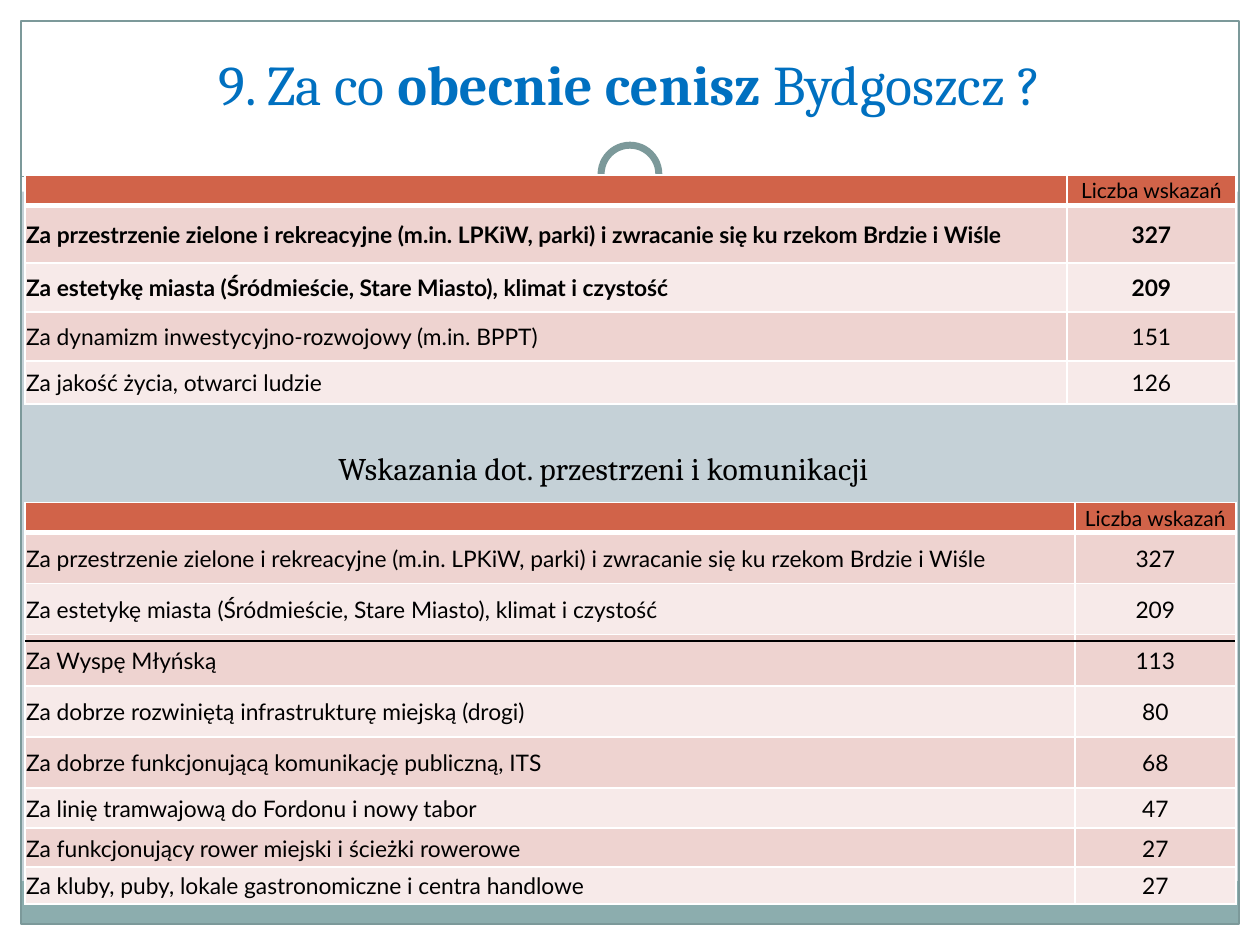
from lxml.etree import SubElement
from pptx import Presentation
from pptx.dml.color import RGBColor
from pptx.enum.dml import MSO_LINE
from pptx.enum.shapes import MSO_CONNECTOR, MSO_SHAPE
from pptx.enum.text import MSO_ANCHOR, PP_ALIGN
from pptx.oxml.ns import qn
from pptx.util import Pt

# Content
TITLE = [("9. Za co ", False), ("obecnie cenisz ", True), ("Bydgoszcz ?", False)]
SUBTITLE = "Wskazania dot. przestrzeni i komunikacji"
COUNT_HEADER = "Liczba wskazań"
GREEN = "Za przestrzenie zielone i rekreacyjne (m.in. LPKiW, parki) i zwracanie się ku rzekom Brdzie i Wiśle"
LOOKS = "Za estetykę miasta (Śródmieście, Stare Miasto), klimat i czystość"

# Each row: label, count, height
TABLES = [
    {"top": 100, "columns": (595.5, 96.5), "bold_rows": 2, "rows": [
        (GREEN, 327, 33),
        (LOOKS, 209, 28),
        ("Za dynamizm inwestycyjno-rozwojowy (m.in. BPPT)", 151, 28),
        ("Za jakość życia, otwarci ludzie", 126, 24.5),
    ]},
    {"top": 287, "columns": (600, 92), "bold_rows": 0, "rows": [
        (GREEN, 327, 29.2),
        (LOOKS, 209, 29.2),
        ("Za Wyspę Młyńską", 113, 29.2),
        ("Za dobrze rozwiniętą infrastrukturę miejską (drogi)", 80, 29.2),
        ("Za dobrze funkcjonującą komunikację publiczną, ITS", 68, 29.2),
        ("Za linię tramwajową do Fordonu i nowy tabor", 47, 23),
        ("Za funkcjonujący rower miejski i ścieżki rowerowe", 27, 22.2),
        ("Za kluby, puby, lokale gastronomiczne i centra handlowe", 27, 21),
    ]},
]

WIDTH, HEIGHT, EDGE = 720, 540, 12
TABLE_LEFT, HEADER_HEIGHT = 14.2, 17.3
WHITE, BLACK, TEAL = "FFFFFF", "000000", "7C999A"
HEADER_FILL, BANDS = "D16349", ("EED3D0", "F7EAE9")


def color(value):
    return RGBColor.from_string(value)


def add_text(para, text, font="Lato", size=13, fill=BLACK, bold=False, align=PP_ALIGN.LEFT):
    para.alignment = align
    span = para.add_run()
    span.text = text
    span.font.name, span.font.size, span.font.bold = font, Pt(size), bold
    span.font.color.rgb = color(fill)


def add_shape(kind, left, top, width, height, fill=None, line=None, weight=0.75):
    shape = page.shapes.add_shape(kind, Pt(left), Pt(top), Pt(width), Pt(height))
    shape.shadow.inherit = False
    if fill:
        shape.fill.solid()
        shape.fill.fore_color.rgb = color(fill)
    else:
        shape.fill.background()
    if line:
        shape.line.color.rgb = color(line)
        shape.line.width = Pt(weight)
    else:
        shape.line.fill.background()


def add_line(left, right, height, line, weight, dash=None):
    connector = page.shapes.add_connector(
        MSO_CONNECTOR.STRAIGHT, Pt(left), Pt(height), Pt(right), Pt(height))
    connector.line.color.rgb = color(line)
    connector.line.width = Pt(weight)
    if dash:
        connector.line.dash_style = dash
    SubElement(connector._element.spPr, qn("a:effectLst"))


def add_box(left, top, width, height, anchor):
    box = page.shapes.add_textbox(Pt(left), Pt(top), Pt(width), Pt(height))
    box.text_frame.word_wrap = True
    box.text_frame.vertical_anchor = anchor
    return box.text_frame.paragraphs[0]


def style_cell(cell, fill, top=1, bottom=1):
    cell.vertical_anchor = MSO_ANCHOR.MIDDLE
    cell.margin_left = cell.margin_right = cell.margin_top = Pt(0.7)
    cell.margin_bottom = Pt(0)
    properties = cell._tc.get_or_add_tcPr()
    for side, weight in (("L", 1), ("R", 1), ("T", top), ("B", bottom)):
        border = SubElement(properties, qn("a:ln" + side), w=str(Pt(weight)))
        SubElement(SubElement(border, qn("a:solidFill")), qn("a:srgbClr"), val=WHITE)
    cell.fill.solid()
    cell.fill.fore_color.rgb = color(fill)


def add_table(top, columns, bold_rows, rows):
    heights = [HEADER_HEIGHT] + [height for _, _, height in rows]
    table = page.shapes.add_table(len(heights), 2, Pt(TABLE_LEFT), Pt(top),
                                  Pt(sum(columns)), Pt(sum(heights))).table
    for column, width in zip(table.columns, columns):
        column.width = Pt(width)
    for row, height in zip(table.rows, heights):
        row.height = Pt(height)
    for cell in table.rows[0].cells:
        style_cell(cell, HEADER_FILL, bottom=3)
    # A small size keeps the empty header cell from stretching its row
    SubElement(table.cell(0, 0).text_frame.paragraphs[0]._p, qn("a:endParaRPr"), sz="1200")
    add_text(table.cell(0, 1).text_frame.paragraphs[0], COUNT_HEADER, size=12,
             align=PP_ALIGN.CENTER)
    for index, (label, count, _) in enumerate(rows):
        for column, (text, align) in enumerate(
                ((label, PP_ALIGN.LEFT), (str(count), PP_ALIGN.CENTER))):
            cell = table.cell(index + 1, column)
            style_cell(cell, BANDS[index % 2], top=1 if index else 3)
            add_text(cell.text_frame.paragraphs[0], text, bold=index < bold_rows, align=align)


deck = Presentation()
deck.slide_width, deck.slide_height = Pt(WIDTH), Pt(HEIGHT)
page = deck.slides.add_slide(deck.slide_layouts[6])
page.background.fill.solid()
page.background.fill.fore_color.rgb = color("C5D1D7")

# White margins, footer band and frame
for area in ((0, HEIGHT - EDGE, WIDTH, EDGE), (0, 0, WIDTH, 109.5),
             (0, 0, EDGE, HEIGHT), (WIDTH - EDGE, 0, EDGE, HEIGHT)):
    add_shape(MSO_SHAPE.RECTANGLE, *area, fill=WHITE)
add_shape(MSO_SHAPE.RECTANGLE, EDGE, 503.5, WIDTH - 2 * EDGE, 24.5, fill="8CADAE")
add_shape(MSO_SHAPE.RECTANGLE, EDGE, EDGE, WIDTH - 2 * EDGE, HEIGHT - 2 * EDGE, line=TEAL)
add_line(EDGE, WIDTH - EDGE, 100.8, TEAL, 0.75, MSO_LINE.SQUARE_DOT)

# Ring under the title
for size, line in ((48, None), (33, TEAL)):
    add_shape(MSO_SHAPE.OVAL, (WIDTH - size) / 2, 99.5 - size / 2, size, size,
              fill=WHITE, line=line, weight=4)

# Title, subtitle and tables
title = add_box(20, 21, 680, 49, MSO_ANCHOR.BOTTOM)
for text, bold in TITLE:
    add_text(title, text, font="Cambria", size=32, fill="0070C0", bold=bold,
             align=PP_ALIGN.CENTER)
subtitle = add_box(38, 253, 613.5, 29, MSO_ANCHOR.TOP)
add_text(subtitle, SUBTITLE, font="Cambria", size=18, align=PP_ALIGN.CENTER)
for entry in TABLES:
    add_table(**entry)

# Line below the two leading answers
add_line(TABLE_LEFT, WIDTH - TABLE_LEFT, 366.5, BLACK, 1.25)

deck.save("out.pptx")
